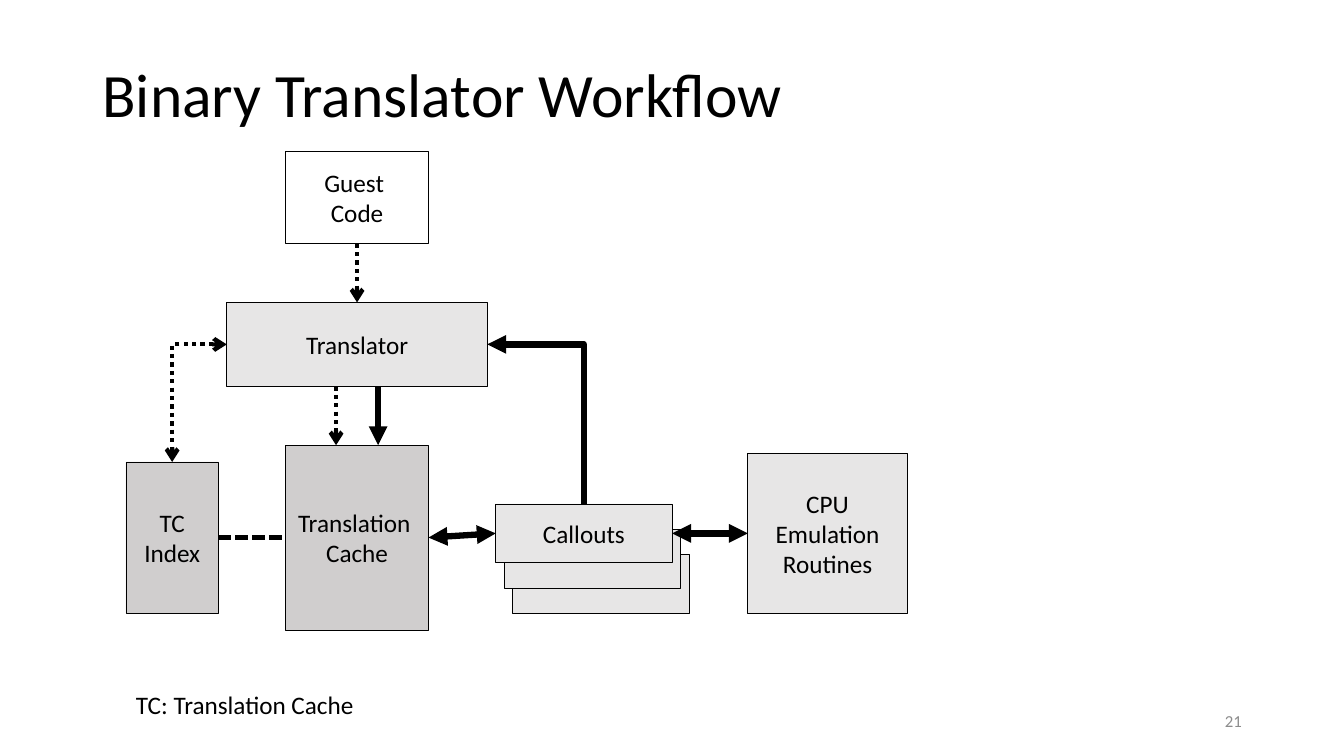
from lxml import etree
from pptx import Presentation
from pptx.dml.color import RGBColor
from pptx.enum.dml import MSO_LINE
from pptx.enum.shapes import MSO_CONNECTOR, MSO_SHAPE
from pptx.enum.text import MSO_ANCHOR, MSO_AUTO_SIZE, PP_ALIGN
from pptx.oxml.ns import qn
from pptx.util import Inches, Pt

RECTANGLE = MSO_SHAPE.RECTANGLE
STRAIGHT, ELBOW = MSO_CONNECTOR.STRAIGHT, MSO_CONNECTOR.ELBOW
DOTTED, DASHED = MSO_LINE.ROUND_DOT, MSO_LINE.SQUARE_DOT
MIDDLE = MSO_ANCHOR.MIDDLE
LEFT, CENTER, RIGHT = PP_ALIGN.LEFT, PP_ALIGN.CENTER, PP_ALIGN.RIGHT

FONT = "Calibri"
COLORS = {
    "ink": "000000",
    "paper": "FFFFFF",
    "code": "E7E6E6",
    "cache": "D0CECE",
    "number": "8C8C8C",
}
GRID_PER_INCH = 12
TOP, WEST, BOTTOM, EAST = range(4)  # connection sites of a rectangle


def color(name):
    return RGBColor.from_string(COLORS[name])


def grid(*cells):
    """Turn grid columns and rows into lengths."""
    return [Inches(cell / GRID_PER_INCH) for cell in cells]


def write(shape, lines, size=18, align=LEFT, ink="ink"):
    frame = shape.text_frame
    frame.word_wrap = True
    frame.text = "\n".join(lines)
    for paragraph in frame.paragraphs:
        paragraph.alignment = align
        paragraph.font.name = FONT
        paragraph.font.size = Pt(size)
        paragraph.font.color.rgb = color(ink)
    return frame


def add_title(slide, text):
    title = slide.shapes.title
    title.left, title.top, title.width, title.height = grid(11, 4.8, 138, 13.7)
    frame = write(title, [text], size=44)
    frame.auto_size = MSO_AUTO_SIZE.NONE
    frame.vertical_anchor = MIDDLE
    frame.paragraphs[0].line_spacing = 0.9


def add_label(slide, cells, text, **style):
    label = slide.shapes.add_textbox(*grid(*cells))
    return write(label, [text], **style)


def add_box(shapes, cells, fill, *lines):
    box = shapes.add_shape(RECTANGLE, *grid(*cells))
    box.shadow.inherit = False
    box.fill.solid()
    box.fill.fore_color.rgb = color(fill)
    box.line.color.rgb = color("ink")
    box.line.width = Pt(0.5)
    if lines:
        write(box, lines, align=CENTER).vertical_anchor = MIDDLE
    return box


def add_callouts(slide):
    """Stack three boxes, the labelled one in front, and return that one."""
    stack = slide.shapes.add_group_shape()
    for step, lines in ((2, ()), (1, ()), (0, ("Callouts",))):
        front = add_box(stack.shapes, (59 + step, 60 + 3 * step, 21, 7), "code", *lines)
    return front


def style_connector(connector, width, dash=None, head=None, tail=None):
    connector.line.color.rgb = color("ink")
    connector.line.width = Pt(width)
    if dash:
        connector.line.dash_style = dash
    properties = connector._element.spPr
    outline = properties.find(qn("a:ln"))
    for tag, arrow in (("a:headEnd", head), ("a:tailEnd", tail)):
        if arrow:
            etree.SubElement(outline, qn(tag)).set("type", arrow)
    etree.SubElement(properties, qn("a:effectLst"))


def add_line(slide, start, end, **style):
    """Draw a straight line between two grid points."""
    connector = slide.shapes.add_connector(STRAIGHT, *grid(*start, *end))
    style_connector(connector, **style)


def link(slide, source, source_site, target, target_site, bent=False, **style):
    """Join two boxes; a bent link runs sideways first, then down."""
    connector = slide.shapes.add_connector(ELBOW if bent else STRAIGHT, 0, 0, 0, 0)
    connector.begin_connect(source, source_site)
    connector.end_connect(target, target_site)
    if bent:
        connector._element.spPr.find(qn("a:prstGeom")).set("prst", "bentConnector2")
    style_connector(connector, **style)


def main():
    presentation = Presentation()
    presentation.slide_width = Inches(13.33)
    presentation.slide_height = Inches(7.5)
    slide = presentation.slides.add_slide(presentation.slide_layouts[5])

    add_title(slide, "Binary Translator Workflow")
    number = add_label(slide, (113, 83.4, 36, 4.8), "21", size=12, align=RIGHT, ink="number")
    number.vertical_anchor = MIDDLE

    shapes = slide.shapes
    translator = add_box(shapes, (27, 36, 31, 10), "code", "Translator")
    guest = add_box(shapes, (34, 18, 17, 11), "paper", "Guest ", "Code")
    cache = add_box(shapes, (34, 53, 17, 22), "cache", "Translation ", "Cache")
    callouts = add_callouts(slide)
    index = add_box(shapes, (15, 55, 11, 18), "cache", "TC", "Index")
    routines = add_box(shapes, (89, 54, 19, 19), "code", "CPU Emulation", "Routines")

    dotted = {"width": 3, "dash": DOTTED, "tail": "arrow"}
    solid = {"width": 4.5, "tail": "triangle"}
    both_ways = {**solid, "head": "triangle"}
    link(slide, guest, BOTTOM, translator, TOP, **dotted)
    add_line(slide, (40, 46), (40, 53), **dotted)
    add_line(slide, (45, 46), (45, 53), **solid)
    link(slide, index, EAST, cache, WEST, width=3, dash=DASHED)
    link(slide, cache, EAST, callouts, WEST, **both_ways)
    link(slide, callouts, EAST, routines, WEST, **both_ways)
    link(slide, translator, EAST, callouts, TOP, bent=True, width=4.5, head="triangle")
    link(slide, translator, WEST, index, TOP, bent=True, head="arrow", **dotted)

    add_label(slide, (15, 81.5, 83.6, 4.8), "TC: Translation Cache")
    presentation.save("out.pptx")


if __name__ == "__main__":
    main()
